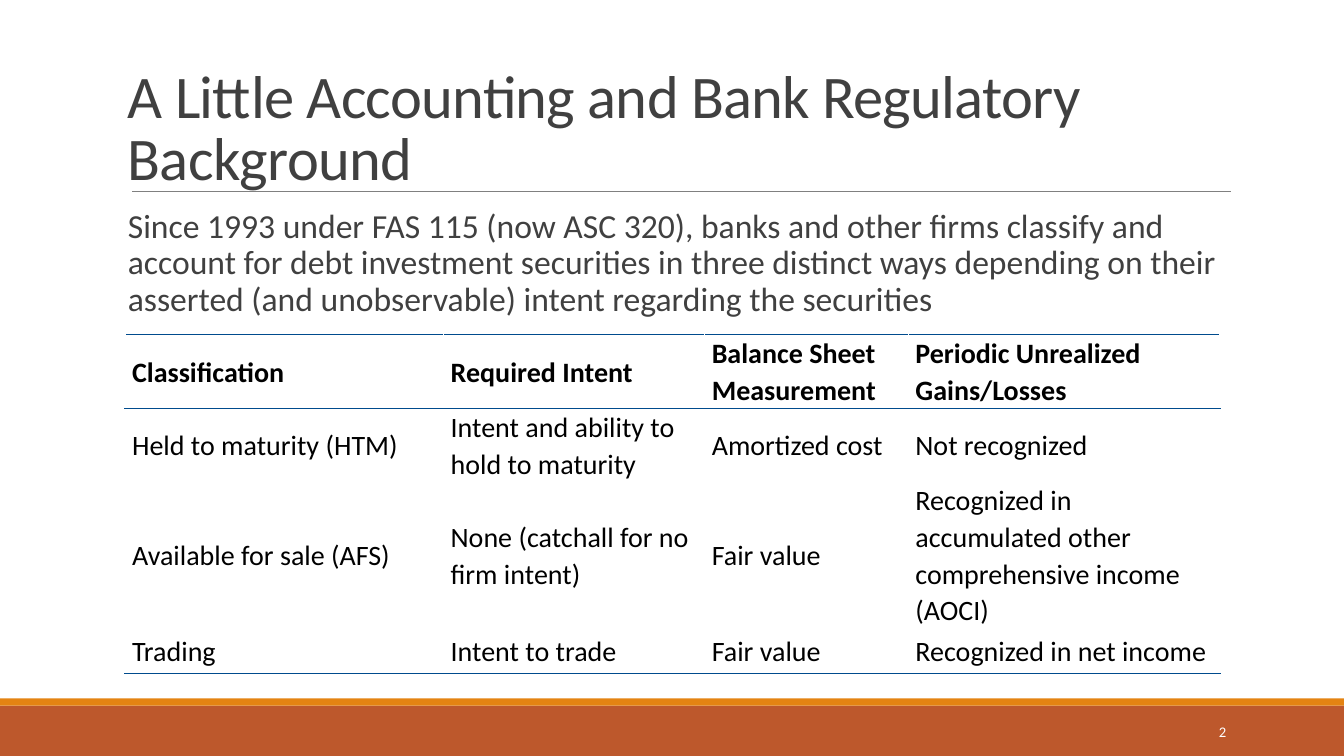
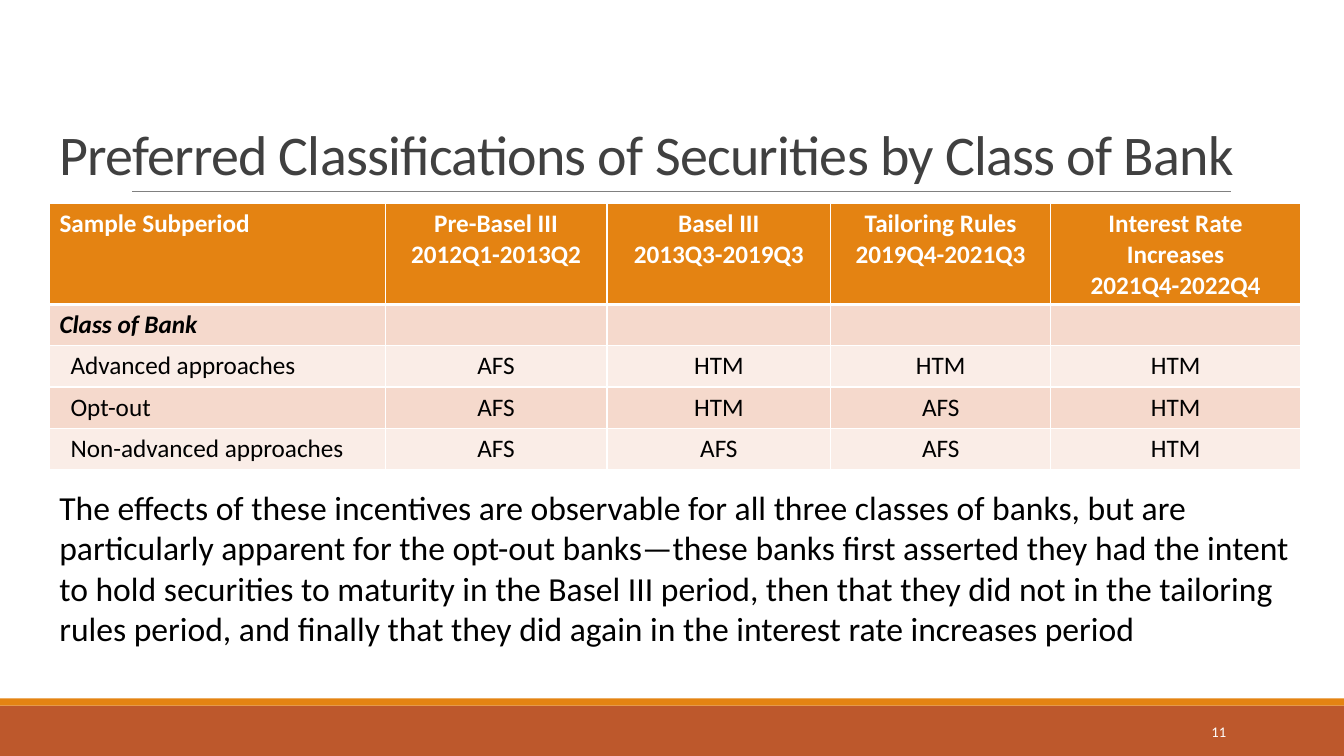
from lxml import etree
from pptx import Presentation
from pptx.dml.color import RGBColor
from pptx.enum.shapes import MSO_CONNECTOR, MSO_SHAPE
from pptx.enum.text import MSO_ANCHOR, PP_ALIGN
from pptx.oxml.ns import qn
from pptx.util import Inches, Pt

# Shared colours and font
FONT = "Calibri"
WHITE = RGBColor(0xFF, 0xFF, 0xFF)
BLACK = RGBColor(0x00, 0x00, 0x00)
DARK_GREY = RGBColor(0x40, 0x40, 0x40)
RULE_GREY = RGBColor(0x80, 0x80, 0x80)
RUST = RGBColor(0xBD, 0x58, 0x2C)
ORANGE = RGBColor(0xE4, 0x83, 0x12)
BLUE = RGBColor(0x00, 0x4B, 0x8D)
BAND_DARK = RGBColor(0xF5, 0xD9, 0xCC)
BAND_LIGHT = RGBColor(0xFA, 0xED, 0xE7)

SLIDE_WIDTH = 13.33
SLIDE_HEIGHT = 7.5

# Table contents
ACCOUNTING_ROWS = [
    ["Classification", "Required Intent", "Balance Sheet Measurement",
     "Periodic Unrealized Gains/Losses"],
    ["Held to maturity (HTM)", "Intent and ability to hold to maturity",
     "Amortized cost", "Not recognized"],
    ["Available for sale (AFS)", "None (catchall for no firm intent)",
     "Fair value",
     "Recognized in accumulated other comprehensive income (AOCI)"],
    ["Trading", "Intent to trade", "Fair value", "Recognized in net income"],
]
PREFERENCE_ROWS = [
    ["Sample Subperiod", "Pre-Basel III\n2012Q1-2013Q2",
     "Basel III\n2013Q3-2019Q3", "Tailoring Rules\n2019Q4-2021Q3",
     "Interest Rate Increases\n2021Q4-2022Q4"],
    ["Class of Bank", "", "", "", ""],
    ["Advanced approaches", "AFS", "HTM", "HTM", "HTM"],
    ["Opt-out", "AFS", "HTM", "AFS", "HTM"],
    ["Non-advanced approaches", "AFS", "AFS", "AFS", "HTM"],
]


def write_text(frame, text, size, color, bold=False, italic=False,
               align=PP_ALIGN.LEFT, line_spacing=None, tracking=None):
    """Fill a text frame, one paragraph per line of text."""
    for index, line in enumerate(text.split("\n")):
        paragraph = frame.add_paragraph() if index else frame.paragraphs[0]
        paragraph.alignment = align
        if line_spacing:
            paragraph.line_spacing = line_spacing
        run = paragraph.add_run()
        run.text = line
        font = run.font
        font.name, font.size = FONT, Pt(size)
        font.bold, font.italic = bold, italic
        font.color.rgb = color
        if tracking:
            run._r.get_or_add_rPr().set("spc", str(int(tracking * 100)))


def add_text_box(slide, box, text, size, color, anchor=MSO_ANCHOR.TOP, **style):
    shape = slide.shapes.add_textbox(*map(Inches, box))
    shape.text_frame.word_wrap = True
    shape.text_frame.vertical_anchor = anchor
    write_text(shape.text_frame, text, size, color, **style)


def add_band(slide, top, height, color):
    band = slide.shapes.add_shape(
        MSO_SHAPE.RECTANGLE, 0, Inches(top), Inches(SLIDE_WIDTH), Inches(height))
    band.shadow.inherit = False
    band.fill.solid()
    band.fill.fore_color.rgb = color
    band.line.fill.background()


def add_title_rule(slide):
    rule = slide.shapes.add_connector(
        MSO_CONNECTOR.STRAIGHT,
        Inches(1.31), Inches(1.9), Inches(12.21), Inches(1.9))
    rule.line.color.rgb = RULE_GREY
    rule.line.width = Pt(0.5)
    etree.SubElement(rule._element.spPr, qn("a:effectLst"))


def add_base_slide(presentation, title, title_box, title_size, number):
    """Add a slide with the shared bands, rule, title and slide number."""
    slide = presentation.slides.add_slide(presentation.slide_layouts[6])
    add_band(slide, 7, 0.5, RUST)
    add_band(slide, 6.93, 0.07, ORANGE)
    add_title_rule(slide)
    add_text_box(slide, title_box, title, title_size, DARK_GREY,
                 MSO_ANCHOR.BOTTOM, line_spacing=0.85, tracking=-0.5)
    add_text_box(slide, (10.83, 7.06, 1.43, 0.4), number, 10.5, WHITE,
                 MSO_ANCHOR.MIDDLE, align=PP_ALIGN.RIGHT)
    return slide


def add_table(slide, left, top, widths, heights):
    frame = slide.shapes.add_table(
        len(heights), len(widths), Inches(left), Inches(top),
        Inches(sum(widths)), Inches(sum(heights)))
    table = frame.table
    for column, width in zip(table.columns, widths):
        column.width = Inches(width)
    for row, height in zip(table.rows, heights):
        row.height = Inches(height)
    return table


def add_border(cell, side, color, width):
    """Draw one cell edge; side is lnL, lnR, lnT or lnB, in that order."""
    line = etree.SubElement(cell._tc.get_or_add_tcPr(), qn(f"a:{side}"),
                            w=str(Pt(width)))
    fill = etree.SubElement(line, qn("a:solidFill"))
    etree.SubElement(fill, qn("a:srgbClr"), val=str(color))


def add_accounting_table(slide):
    table = add_table(slide, 1.24, 3.32, [3.16, 2.59, 2.02, 3.09],
                      [0.73, 0.73, 1.45, 0.45])
    table.first_row = table.horz_banding = False
    last = len(ACCOUNTING_ROWS) - 1
    for row, texts in enumerate(ACCOUNTING_ROWS):
        for column, text in enumerate(texts):
            cell = table.cell(row, column)
            cell.margin_left = cell.margin_right = Inches(0.07)
            cell.margin_top = cell.margin_bottom = 0
            cell.vertical_anchor = MSO_ANCHOR.MIDDLE
            if row in (0, 1):
                add_border(cell, "lnT", BLUE, 1)
            if row in (0, last):
                add_border(cell, "lnB", BLUE, 1)
            cell.fill.background()
            write_text(cell.text_frame, text, 20, BLACK, bold=row == 0,
                       line_spacing=1.07)


def add_preference_table(slide):
    table = add_table(slide, 0.49, 2.02, [3.33, 2.2, 2.22, 2.18, 2.48],
                      [1] + [0.41] * 4)
    for row, texts in enumerate(PREFERENCE_ROWS):
        header, subheader = row == 0, row == 1
        band = ORANGE if header else BAND_DARK if row % 2 else BAND_LIGHT
        for column, text in enumerate(texts):
            cell = table.cell(row, column)
            if column == 0 and row > 1:
                cell.margin_left = Inches(0.21)
            for side in ("lnL", "lnR", "lnT", "lnB"):
                header_edge = (row, side) in ((0, "lnB"), (1, "lnT"))
                add_border(cell, side, WHITE, 3 if header_edge else 1)
            cell.fill.solid()
            cell.fill.fore_color.rgb = band
            if text:
                write_text(cell.text_frame, text, 18,
                           WHITE if header else BLACK,
                           bold=header or subheader, italic=subheader,
                           align=PP_ALIGN.CENTER if column else PP_ALIGN.LEFT)


def build_accounting_slide(presentation):
    slide = add_base_slide(
        presentation, "A Little Accounting and Bank Regulatory Background",
        (1.17, 0.68, 11, 1.28), 43.2, "2")
    add_text_box(
        slide, (1.17, 2.03, 11.1, 1.28),
        "Since 1993 under FAS 115 (now ASC 320), banks and other firms "
        "classify and account for debt investment securities in three "
        "distinct ways depending on their asserted (and unobservable) intent "
        "regarding the securities",
        24, DARK_GREY, line_spacing=0.9)
    add_accounting_table(slide)


def build_preference_slide(presentation):
    slide = add_base_slide(
        presentation, "Preferred Classifications of Securities by Class of Bank",
        (0.49, 0.31, 12.42, 1.59), 40, "11")
    add_preference_table(slide)
    add_text_box(
        slide, (0.49, 4.78, 12.42, 1.72),
        "The effects of these incentives are observable for all three classes "
        "of banks, but are particularly apparent for the opt-out banks—these "
        "banks first asserted they had the intent to hold securities to "
        "maturity in the Basel III period, then that they did not in the "
        "tailoring rules period, and finally that they did again in the "
        "interest rate increases period",
        24, BLACK)


def main():
    presentation = Presentation()
    presentation.slide_width = Inches(SLIDE_WIDTH)
    presentation.slide_height = Inches(SLIDE_HEIGHT)
    build_accounting_slide(presentation)
    build_preference_slide(presentation)
    presentation.save("out.pptx")


if __name__ == "__main__":
    main()
